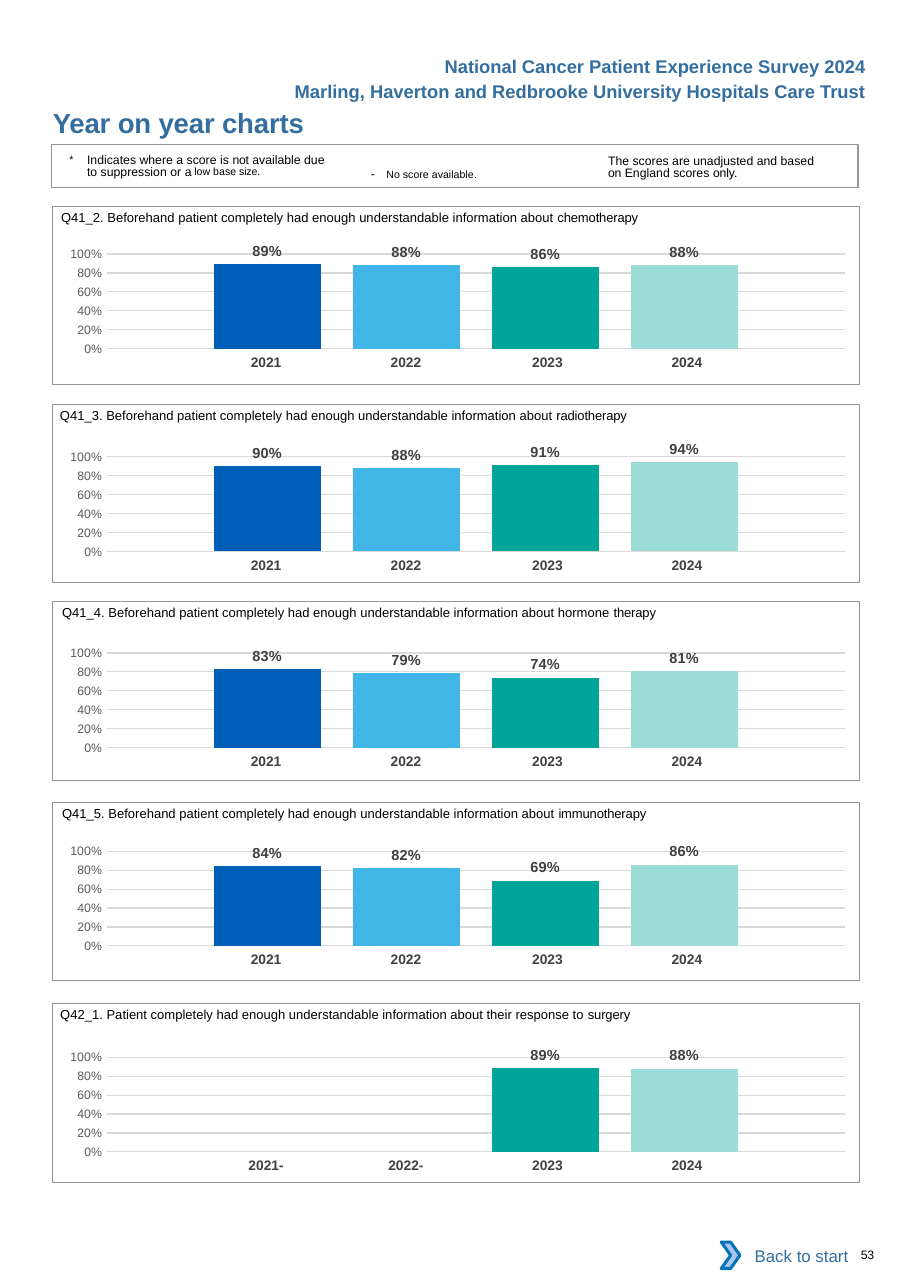
"""Build the year on year charts page of the patient experience survey report."""
import dataclasses

import lxml.etree
import pptx
import pptx.chart.data
import pptx.dml.color
import pptx.enum.chart
import pptx.enum.shapes
import pptx.enum.text
import pptx.oxml
import pptx.oxml.ns
import pptx.util

Pt = pptx.util.Pt
qn = pptx.oxml.ns.qn
ALIGN = pptx.enum.text.PP_ALIGN
ANCHOR = pptx.enum.text.MSO_ANCHOR
SHAPE = pptx.enum.shapes.MSO_SHAPE

TITLE = "Year on year charts"
HEADERS = [
    (49, "Marling, Haverton and Redbrooke University Hospitals Care Trust"),
    (32.6, "National Cancer Patient Experience Survey 2024"),
]
HEADER_LEFT, HEADER_WIDTH = 173.1, 400
PAGE_NUMBER = "53"
BACK_LABEL = "Back to start"

SUPPRESSED_NOTE = [
    ("*\t", 12, 0, 3), ("Indicates where a score is ", 8, 0, 0), ("not ", 8, -0.2, 0),
    ("available due to suppression or ", 8, 0, 0), ("a ", 8, -0.5, 0),
    ("low base", 12, 0, 7), (" size.", 12, -0.1, 7),
]
NO_SCORE_NOTE = [("- ", 8, 2.6, 0), ("No score available", 12, 0, 3), (".", 12, -0.1, 3)]
UNADJUSTED_NOTE = [
    ("The scores are unadjusted and based", 8, 0, 0), (" on", 8, -0.2, 0),
    (" England scores ", 8, 0, 0), ("only.", 8, -0.1, 0),
]

YEARS = ["2021", "2022", "2023", "2024"]
INFORMED = "Beforehand patient completely had enough understandable information about "
QUESTIONS = [
    {"lead": "Q41_2. " + INFORMED, "ending": "chemotherapy", "scores": [0.89, 0.88, 0.86, 0.88],
     "panel_top": 134.6, "chart_top": 152.6, "question_left": 39.9},
    {"lead": "Q41_3. " + INFORMED, "ending": "radiotherapy", "scores": [0.90, 0.88, 0.91, 0.94],
     "panel_top": 264.2, "chart_top": 285.1, "question_left": 39.2},
    {"lead": "Q41_4. " + INFORMED + "hormone ", "ending": "therapy",
     "scores": [0.83, 0.79, 0.74, 0.81],
     "panel_top": 393.1, "chart_top": 413.3, "question_left": 40.6},
    {"lead": "Q41_5. " + INFORMED, "ending": "immunotherapy", "scores": [0.84, 0.82, 0.69, 0.86],
     "panel_top": 524.2, "chart_top": 542.9, "question_left": 40.6},
    {"lead": "Q42_1. Patient completely had enough understandable information about their response to ",
     "ending": "surgery", "scores": [None, None, 0.89, 0.88],
     "panel_top": 655.9, "chart_top": 677.5, "question_left": 39.4},
]
PANEL_LEFT, PANEL_WIDTH, PANEL_HEIGHT = 34.4, 527, 116.6
CHART_LEFT, CHART_HEIGHT, YEARS_OFFSET = 28.2, 92.9, 75.8
YEARS_LEFT, YEARS_HEIGHT = 124.6, 19.4
YEAR_WIDTHS = [91.4, 91.4, 96.5, 91.4]
YEAR_MARGINS = [(7.2, 0), (7.2, 0), (7.2, 2.9), (7.2, 8.6)]
PLOT_LAYOUT = {"x": 0.079, "y": 0.145, "w": 0.915, "h": 0.666}
NO_TABLE_STYLE = "{2D5ABB26-0587-4C30-8999-92F81FD0307C}"


@dataclasses.dataclass(frozen=True)
class Theme:
    """Colours and type sizes of the page."""
    font: str = "Arial"
    chart_font: str = "Calibri"
    heading: str = "336E9F"
    ink: str = "000000"
    border: str = "939598"
    year: str = "414042"
    axis: str = "595959"
    label: str = "404040"
    grid: str = "D9D9D9"
    paper: str = "FFFFFF"
    arrow: str = "A8C7E9"
    arrow_edge: str = "0A74BB"
    bars: tuple = ("005EB8", "41B6E6", "00A499", "9CDCD7")
    title_size: float = 18
    header_size: float = 12
    back_size: float = 11
    chart_size: float = 10
    label_size: float = 9.5
    year_size: float = 9
    question_size: float = 8.5
    small_size: float = 8


THEME = Theme()


def rgb(code):
    """Return the colour of a hex code."""
    return pptx.dml.color.RGBColor.from_string(code)


def style_font(font, size, color, bold=False, name=THEME.font):
    """Set family, size, colour and weight."""
    font.name, font.size, font.bold = name, Pt(size), bold
    font.color.rgb = rgb(color)


def add_run(paragraph, text, size, color, bold=False, spacing=0, baseline=0):
    """Append a styled run, with spacing in points and baseline in percent."""
    run = paragraph.add_run()
    run.text = text
    style_font(run.font, size, color, bold)
    for key, value in (("spc", spacing * 100), ("baseline", baseline * 1000)):
        if value:
            run._r.get_or_add_rPr().set(key, str(round(value)))


def set_frame(frame, margins=(0, 0, 0, 0), anchor=ANCHOR.TOP, align=ALIGN.LEFT):
    """Prepare a text frame and return its first paragraph."""
    frame.word_wrap, frame.vertical_anchor = True, anchor
    frame.margin_left, frame.margin_top, frame.margin_right, frame.margin_bottom = map(Pt, margins)
    frame.paragraphs[0].alignment = align
    return frame.paragraphs[0]


def add_text(shapes, box, **layout):
    """Add a text box and return its first paragraph."""
    return set_frame(shapes.add_textbox(*map(Pt, box)).text_frame, **layout)


def add_block(shapes, kind, box, fill=None, line=None, width=0.5):
    """Add a preset shape with the given fill and outline."""
    block = shapes.add_shape(kind, *map(Pt, box))
    block.shadow.inherit = False
    for target, color in ((block.fill, fill), (block.line.fill, line)):
        if color:
            target.solid()
            target.fore_color.rgb = rgb(color)
        else:
            target.background()
    if line:
        block.line.width = Pt(width)
    return block


def add_scores(shapes, question):
    """Add the column chart of one question."""
    scores = pptx.chart.data.CategoryChartData(number_format="0%")
    scores.categories = ["1"]
    for number, score in enumerate(question["scores"], 1):
        scores.add_series(f"Series {number}", [score])
    box = (CHART_LEFT, question["chart_top"], PANEL_WIDTH, CHART_HEIGHT)
    chart = shapes.add_chart(
        pptx.enum.chart.XL_CHART_TYPE.COLUMN_CLUSTERED, *map(Pt, box), scores).chart
    chart.has_legend = chart.has_title = False
    style_font(chart.font, THEME.chart_size, THEME.ink, name=THEME.chart_font)
    chart.category_axis.visible = False
    axis = chart.value_axis
    axis.minimum_scale, axis.maximum_scale, axis.major_unit = 0, 1, 0.2
    axis.major_tick_mark = pptx.enum.chart.XL_TICK_MARK.NONE
    axis.format.line.fill.background()
    axis.major_gridlines.format.line.color.rgb = rgb(THEME.grid)
    axis.major_gridlines.format.line.width = Pt(0.75)
    style_font(axis.tick_labels.font, THEME.small_size, THEME.axis)
    axis.tick_labels.number_format, axis.tick_labels.number_format_is_linked = "0%", False
    plot = chart.plots[0]
    plot.gap_width, plot.overlap, plot.vary_by_categories = 200, -30, False
    for bar, color in zip(plot.series, THEME.bars):
        bar.format.fill.solid()
        bar.format.fill.fore_color.rgb = rgb(color)
        labels = bar.data_labels
        labels.show_value = True
        labels.position = pptx.enum.chart.XL_LABEL_POSITION.OUTSIDE_END
        labels.number_format, labels.number_format_is_linked = "0%", False
        style_font(labels.font, THEME.label_size, THEME.label, True)
    area = chart._chartSpace.find(".//" + qn("c:plotArea"))
    for old in area.findall(qn("c:layout")):
        area.remove(old)
    layout = lxml.etree.Element(qn("c:layout"))
    manual = lxml.etree.SubElement(layout, qn("c:manualLayout"))
    settings = {"layoutTarget": "inner", "xMode": "edge", "yMode": "edge", **PLOT_LAYOUT}
    for key, value in settings.items():
        lxml.etree.SubElement(manual, qn("c:" + key)).set("val", str(value))
    area.insert(0, layout)


def add_years(shapes, question):
    """Add the row of years below a chart, with a dash where no score exists."""
    box = (YEARS_LEFT, question["chart_top"] + YEARS_OFFSET, sum(YEAR_WIDTHS), YEARS_HEIGHT)
    table = shapes.add_table(1, len(YEARS), *map(Pt, box)).table
    table.first_row = table.horz_banding = False
    table._tbl.tblPr.find(qn("a:tableStyleId")).text = NO_TABLE_STYLE
    for index, (year, score) in enumerate(zip(YEARS, question["scores"])):
        table.columns[index].width = Pt(YEAR_WIDTHS[index])
        cell = table.cell(0, index)
        cell.fill.background()
        cell.margin_left, cell.margin_right = map(Pt, YEAR_MARGINS[index])
        cell.margin_top = cell.margin_bottom = Pt(3.6)
        paragraph = cell.text_frame.paragraphs[0]
        paragraph.alignment = ALIGN.CENTER
        add_run(paragraph, year if score is not None else year + "-",
                THEME.year_size, THEME.year, True)


def add_panel(shapes, question):
    """Add the chart, years, border and wording of one question."""
    add_scores(shapes, question)
    add_years(shapes, question)
    top = question["panel_top"]
    add_block(shapes, SHAPE.RECTANGLE, (PANEL_LEFT, top, PANEL_WIDTH, PANEL_HEIGHT),
              line=THEME.border)
    wording = add_text(shapes, (question["question_left"], top - 4.5, 515, 17.3),
                       margins=(0, 6.5, 0, 0))
    add_run(wording, question["lead"], THEME.question_size, THEME.ink)
    add_run(wording, question["ending"], THEME.question_size, THEME.ink, spacing=-0.1)


def add_legend(shapes):
    """Add the framed notes above the panels."""
    suppressed = add_text(shapes, (45.4, 99.4, 172, 20), margins=(0, 2.2, 0, 0))
    suppressed._p.get_or_add_pPr().set("marL", str(Pt(11.5)))
    suppressed._p.get_or_add_pPr().set("indent", str(-Pt(11.5)))
    no_score = add_text(shapes, (235.4, 101.4, 131.8, 17.3), margins=(7.2, 3.6, 7.2, 3.6))
    unadjusted = add_text(shapes, (397.4, 99.4, 143, 19.4), margins=(0, 2.2, 0, 0))
    suppressed.line_spacing = unadjusted.line_spacing = Pt(8.1)
    for paragraph, note in ((suppressed, SUPPRESSED_NOTE), (no_score, NO_SCORE_NOTE),
                            (unadjusted, UNADJUSTED_NOTE)):
        for text, size, spacing, baseline in note:
            add_run(paragraph, text, size, THEME.ink, spacing=spacing, baseline=baseline)
    add_block(shapes, SHAPE.RECTANGLE, (33.8, 94.3, PANEL_WIDTH, 28.1),
              line=THEME.border, width=0.75)


def add_back_button(shapes):
    """Add the label and chevron at the foot of the page."""
    button = add_block(shapes, SHAPE.RECTANGLE, (476.6, 805.2, 85, 30.2), fill=THEME.paper)
    label = set_frame(button.text_frame, (7.2, 3.6, 7.2, 3.6), ANCHOR.MIDDLE, ALIGN.RIGHT)
    add_run(label, BACK_LABEL, THEME.back_size, THEME.heading)
    add_block(shapes, SHAPE.CHEVRON, (471.4, 811.7, 12.2, 17.3), THEME.arrow, THEME.arrow_edge, 2)


def main():
    """Assemble and save the page."""
    deck = pptx.Presentation()
    deck.slide_width, deck.slide_height = Pt(594.72), Pt(841.68)
    slide = deck.slides.add_slide(deck.slide_layouts[5])
    shapes = slide.shapes
    title = shapes.title
    title.left, title.top, title.width, title.height = map(Pt, (34.5, 69.1, 324, 21.6))
    add_run(set_frame(title.text_frame), TITLE, THEME.title_size, THEME.heading, True, -0.1)
    for top, text in HEADERS:
        header = add_text(shapes, (HEADER_LEFT, top, HEADER_WIDTH, 21.6),
                          margins=(7.2, 3.6, 7.2, 3.6), align=ALIGN.RIGHT)
        add_run(header, text, THEME.header_size, THEME.heading, True)
    for question in QUESTIONS:
        add_panel(shapes, question)
    add_legend(shapes.add_group_shape().shapes)
    add_back_button(shapes.add_group_shape().shapes)
    page = add_text(shapes, (562.6, 815.3, 30, 9.4))
    add_run(page, PAGE_NUMBER, THEME.small_size, THEME.ink, spacing=-0.2)
    deck.save("out.pptx")


if __name__ == "__main__":
    main()
